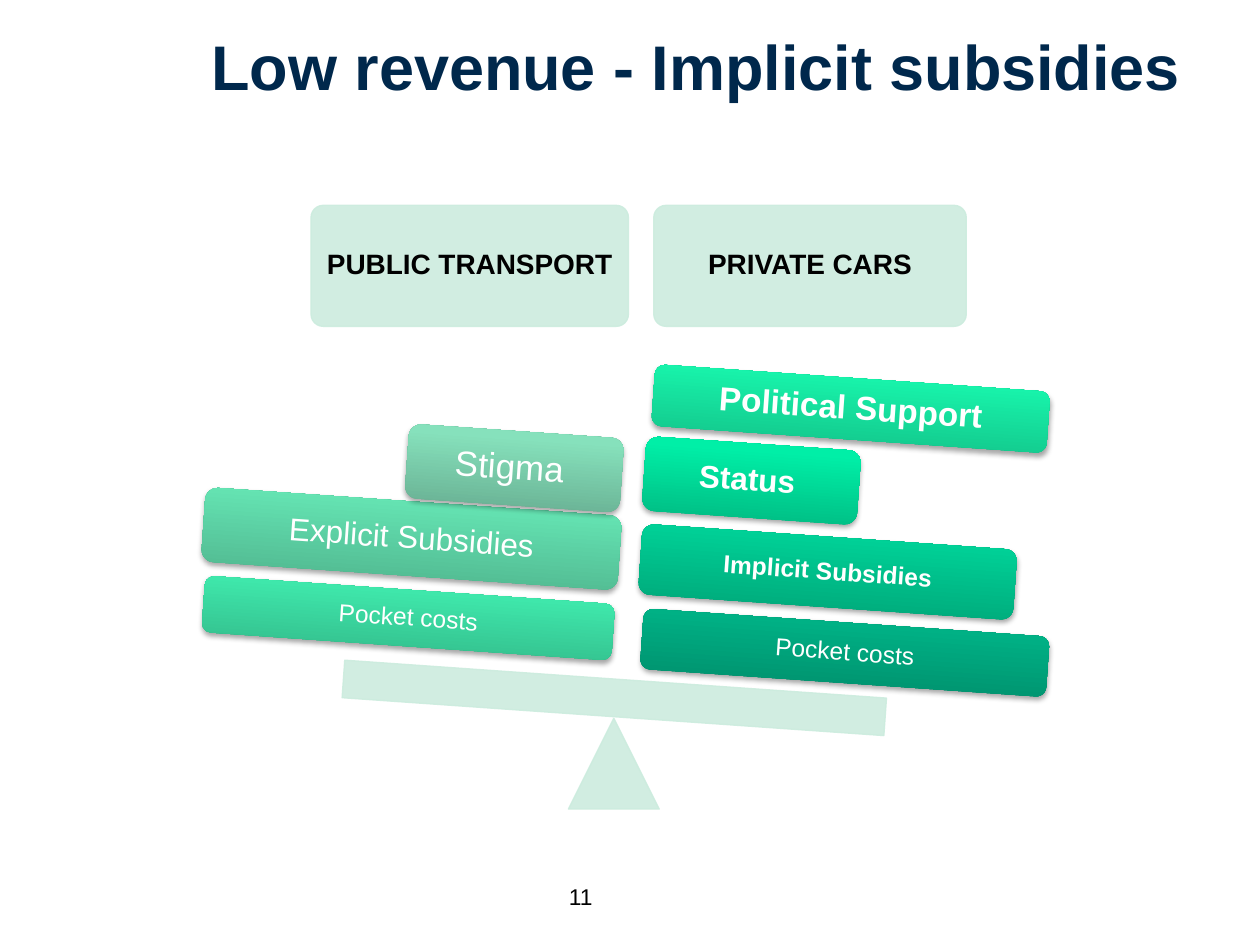
import pptx
import pptx.dml.color
import pptx.enum.shapes
import pptx.enum.text
import pptx.oxml
import pptx.oxml.ns
import pptx.util

Cm, Pt = pptx.util.Cm, pptx.util.Pt
RGBColor = pptx.dml.color.RGBColor
Kind = pptx.enum.shapes.MSO_SHAPE
Side = pptx.enum.text.PP_ALIGN
NS = pptx.oxml.ns.nsdecls("a")

NAVY = RGBColor(0x00, 0x28, 0x4C)
MINT = RGBColor(0xCC, 0xEC, 0xDE)
BLACK = RGBColor(0x00, 0x00, 0x00)
WHITE = RGBColor(0xFF, 0xFF, 0xFF)
TILT = 4

deck = pptx.Presentation()
deck.slide_width, deck.slide_height = Cm(25.4), Cm(19.05)
slide = deck.slides.add_slide(deck.slide_layouts[6])


def write(shape, text, size, color, bold, side=Side.CENTER, inset=0.25, gap=1.0):
    frame = shape.text_frame
    look = {"word_wrap": True, "vertical_anchor": pptx.enum.text.MSO_ANCHOR.MIDDLE}
    for edge in ("left", "right", "top", "bottom"):
        look["margin_" + edge] = Cm(inset)
    for name, value in look.items():
        setattr(frame, name, value)
    frame.text = text
    line = frame.paragraphs[0]
    line.alignment, line.line_spacing = side, gap
    font = line.runs[0].font
    for name, value in {"name": "Arial", "size": Pt(size), "bold": bold}.items():
        setattr(font, name, value)
    font.color.rgb = color


def draw_pale(kind, box):
    shape = slide.shapes.add_shape(kind, *map(Cm, box))
    shape.shadow.inherit = False
    shape.line.width = Pt(0.75)
    for fill in (shape.fill, shape.line.fill):
        fill.solid()
        fill.fore_color.rgb = MINT
    # Ten per cent see-through
    for tint in shape.element.spPr.iter(pptx.oxml.ns.qn("a:srgbClr")):
        tint.append(pptx.oxml.parse_xml(f'<a:alpha {NS} val="90000"/>'))
    return shape


# Page number and title
number = slide.shapes.add_textbox(Cm(9.04), Cm(17.4), Cm(5.33), Cm(1.35))
write(number, "11", 13, BLACK, False)
title = slide.shapes.add_textbox(Cm(4.01), Cm(0.18), Cm(20.98), Cm(2.29))
write(title, "Low revenue - Implicit subsidies", 36, NAVY, True, Side.LEFT)

# Headings of the two sides
for text, left, width in (("PUBLIC TRANSPORT", 6.27, 6.4), ("PRIVATE CARS", 13.18, 6.3)):
    card = draw_pale(Kind.ROUNDED_RECTANGLE, (left, 4.14, width, 2.44))
    card.adjustments[0] = 0.1
    write(card, text, 16, BLACK, True, inset=0.2, gap=0.9)

# Pivot and beam of the scale
draw_pale(Kind.ISOSCELES_TRIANGLE, (11.46, 14.48, 1.83, 1.83))
draw_pale(Kind.RECTANGLE, (6.91, 13.69, 10.95, 0.76)).rotation = TILT

# Weights: text, size, bold, box, dark and light colour
weights = (
    # Private cars, from the beam up
    ("Pocket costs", 14, False, (12.93, 12.55, 8.2, 1.22),
     RGBColor(0x00, 0x8A, 0x68), RGBColor(0x00, 0xB3, 0x87)),
    ("Implicit Subsidies", 14, True, (12.9, 10.82, 7.57, 1.42),
     RGBColor(0x00, 0xA1, 0x75), RGBColor(0x00, 0xD1, 0x97)),
    ("Status ", 18, True, (12.98, 8.94, 4.34, 1.5),
     RGBColor(0x00, 0xB8, 0x80), RGBColor(0x00, 0xEF, 0xA7)),
    ("Political Support", 19, True, (13.16, 7.62, 7.98, 1.24),
     RGBColor(0x12, 0xBD, 0x85), RGBColor(0x18, 0xF5, 0xAC)),
    # Public transport, from the beam up
    ("Pocket costs", 14, False, (4.09, 11.89, 8.28, 1.14),
     RGBColor(0x31, 0xB5, 0x86), RGBColor(0x40, 0xEB, 0xAE)),
    ("Explicit Subsidies", 18, False, (4.09, 10.11, 8.41, 1.5),
     RGBColor(0x4D, 0xB0, 0x8A), RGBColor(0x65, 0xE4, 0xB3)),
    ("Stigma ", 20, False, (8.2, 8.69, 4.34, 1.5),
     RGBColor(0x67, 0xAD, 0x90), RGBColor(0x86, 0xE1, 0xBC)),
)
for text, size, bold, box, dark, light in weights:
    block = slide.shapes.add_shape(Kind.ROUNDED_RECTANGLE, *map(Cm, box))
    block.rotation = TILT
    block.line.fill.background()
    block.fill.gradient()
    block.fill.gradient_angle = 90
    for stop, place, color in zip(block.fill.gradient_stops, (0, 0.8), (dark, light)):
        stop.position = place
        stop.color.rgb = color
    # Soft shadow straight below
    block.shadow.inherit = False
    glow = block.element.spPr.find(pptx.oxml.ns.qn("a:effectLst"))
    glow.append(pptx.oxml.parse_xml(
        f'<a:outerShdw {NS} blurRad="{Pt(3.1)}" dist="{Pt(1.8)}" dir="5400000" rotWithShape="0">'
        '<a:srgbClr val="000000"><a:alpha val="35000"/></a:srgbClr></a:outerShdw>'))
    write(block, text, size, WHITE, bold, inset=0.2, gap=0.9)

deck.save("out.pptx")
